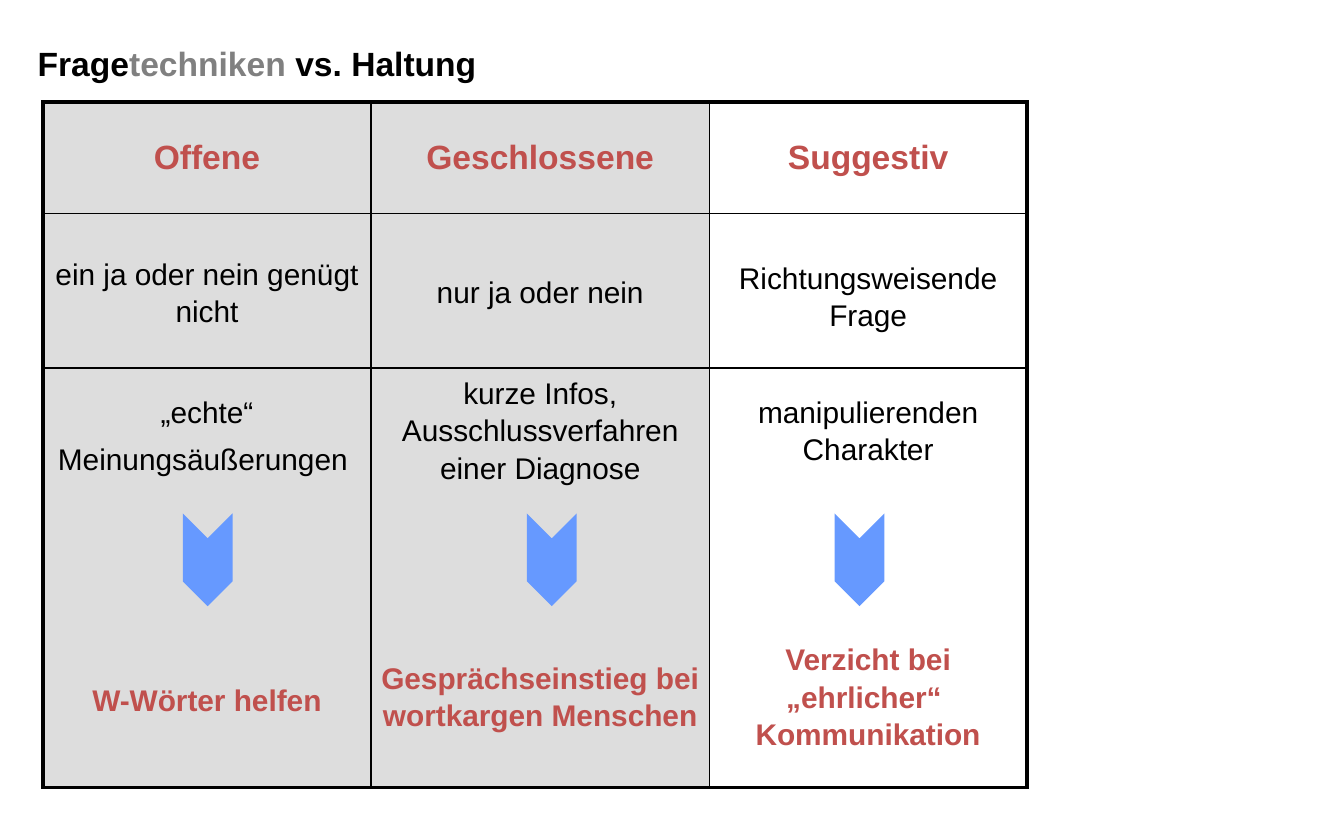
from lxml import etree
from pptx import Presentation
from pptx.dml.color import RGBColor
from pptx.enum.shapes import MSO_SHAPE
from pptx.enum.text import MSO_ANCHOR, PP_ALIGN
from pptx.oxml.ns import qn
from pptx.util import Inches, Pt

CHEVRON = MSO_SHAPE.CHEVRON
TOP = MSO_ANCHOR.TOP
LEFT, CENTER = PP_ALIGN.LEFT, PP_ALIGN.CENTER

FONT = "Arial"
BLACK, GREY, RED, BLUE, SHADE = "000000", "808080", "C0504D", "6699FF", "DDDDDD"
OUTER, INNER = 2.25, 1

COL_WIDTHS = [2.44, 2.52, 2.36]
ROW_HEIGHTS = [0.83, 1.15, 1.17, 0.56, 1.39]
ARROW_ROW = 3

# Row: (size, colour, bold), then per column (space above, line pitch, paragraphs)
ROWS = {
    0: ((18, RED, True), [
        (0.28, 20, ["Offene"]),
        (0.28, 20, ["Geschlossene"]),
        (0.28, 20, ["Suggestiv"])]),
    1: ((16, BLACK, False), [
        (0.3, 20, ["ein ja oder nein genügt nicht"]),
        (0.44, 20, ["nur ja oder nein"]),
        (0.33, 20, ["Richtungsweisende Frage"])]),
    2: ((16, BLACK, False), [
        (0.11, 25, ["„echte“ Meinungsäußerungen "]),
        (0.04, 20, ["kurze Infos,", "Ausschlussverfahren einer Diagnose"]),
        (0.18, 20, ["manipulierenden Charakter"])]),
    4: ((16, RED, True), [
        (0.54, 24, ["W-Wörter helfen"]),
        (0.43, 20, ["Gesprächseinstieg bei wortkargen Menschen"]),
        (0.29, 20, ["Verzicht bei „ehrlicher“ ", "Kommunikation"])]),
}


def rgb(value):
    return RGBColor.from_string(value)


def set_font(font, size, color, bold):
    font.name = FONT
    font.size = Pt(size)
    font.bold = bold
    font.color.rgb = rgb(color)


def add_title(s):
    title = s.shapes.title
    title.left, title.top = Inches(0.18), Inches(0.27)
    title.width, title.height = Inches(5.1), Inches(0.75)
    tf = title.text_frame
    tf.vertical_anchor = TOP
    p = tf.paragraphs[0]
    p.alignment = LEFT
    for text, color in [("Frage", BLACK), ("techniken", GREY), (" vs. Haltung", BLACK)]:
        r = p.add_run()
        r.text = text
        set_font(r.font, 18, color, True)


def set_border(cell, side, width):
    """Draw one cell edge; a width of 0 hides it."""
    ln = etree.SubElement(cell._tc.get_or_add_tcPr(), qn("a:ln" + side))
    if width:
        ln.set("w", str(Pt(width)))
        fill = etree.SubElement(ln, qn("a:solidFill"))
        etree.SubElement(fill, qn("a:srgbClr"), val=BLACK)
    else:
        etree.SubElement(ln, qn("a:noFill"))


def frame_cell(cell, row, col):
    last_row, last_col = len(ROW_HEIGHTS) - 1, len(COL_WIDTHS) - 1
    # The answer, arrow and advice rows form one open block
    set_border(cell, "L", OUTER if col == 0 else INNER)
    set_border(cell, "R", OUTER if col == last_col else INNER)
    set_border(cell, "T", OUTER if row == 0 else INNER if row < ARROW_ROW else 0)
    set_border(cell, "B", OUTER if row == last_row else INNER if row < 2 else 0)
    if col < last_col:
        cell.fill.solid()
        cell.fill.fore_color.rgb = rgb(SHADE)
    else:
        cell.fill.background()


def fill_cell(cell, style, above, pitch, paragraphs):
    cell.margin_left = cell.margin_right = cell.margin_bottom = 0
    cell.margin_top = Inches(above)
    cell.vertical_anchor = TOP
    tf = cell.text_frame
    tf.text = "\n".join(paragraphs)
    for p in tf.paragraphs:
        p.alignment = CENTER
        p.line_spacing = Pt(pitch)
        set_font(p.font, *style)


def add_question_table(s):
    frame = s.shapes.add_table(
        len(ROW_HEIGHTS), len(COL_WIDTHS), Inches(0.32), Inches(0.76),
        Inches(sum(COL_WIDTHS)), Inches(sum(ROW_HEIGHTS)))
    table = frame.table
    table.first_row = table.horz_banding = False
    for column, width in zip(table.columns, COL_WIDTHS):
        column.width = Inches(width)
    for i, height in enumerate(ROW_HEIGHTS):
        table.rows[i].height = Inches(height)
        for j in range(len(COL_WIDTHS)):
            frame_cell(table.cell(i, j), i, j)
    for i, (style, contents) in ROWS.items():
        for j, content in enumerate(contents):
            fill_cell(table.cell(i, j), style, *content)


def add_down_arrow(s, left):
    sp = s.shapes.add_shape(CHEVRON, Inches(left), Inches(3.98), Inches(0.69), Inches(0.37))
    sp.rotation = 90
    sp.adjustments[0] = 0.5
    sp.shadow.inherit = False
    sp.fill.solid()
    sp.fill.fore_color.rgb = rgb(BLUE)
    sp.line.fill.background()


def main():
    prs = Presentation()
    prs.slide_width, prs.slide_height = Inches(10), Inches(6.25)
    s = prs.slides.add_slide(prs.slide_layouts[5])
    add_title(s)
    add_question_table(s)
    # Arrows from the answers to the advice
    for left in (1.2, 3.76, 6.05):
        add_down_arrow(s, left)
    prs.save("out.pptx")


if __name__ == "__main__":
    main()
